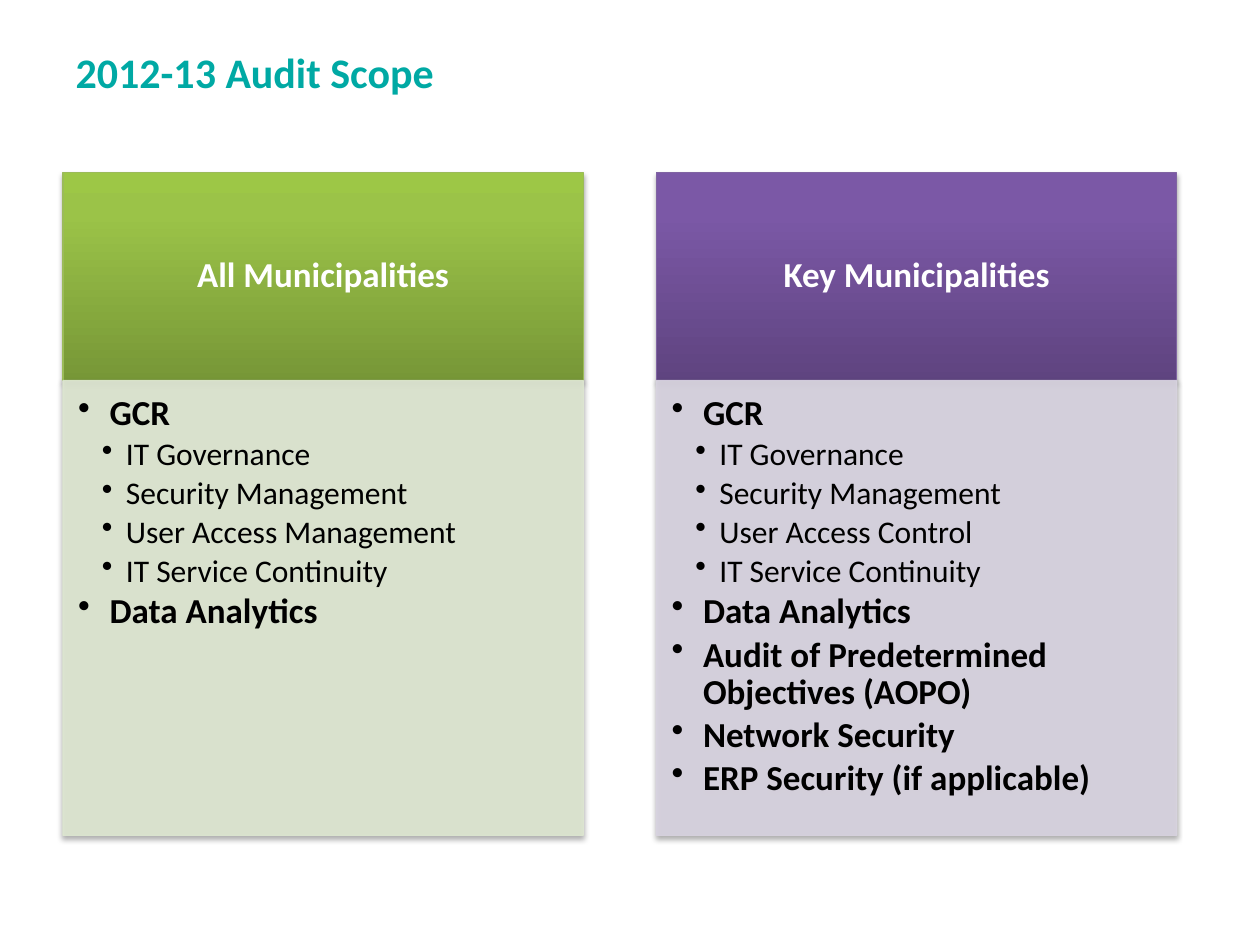
import pptx
import pptx.util
import pptx.dml.color
import pptx.enum.shapes
import pptx.enum.text
import pptx.oxml.ns
import lxml.etree

Inches, Pt = pptx.util.Inches, pptx.util.Pt
RGBColor = pptx.dml.color.RGBColor
ALIGN, ANCHOR = pptx.enum.text.PP_ALIGN, pptx.enum.text.MSO_ANCHOR
qn = pptx.oxml.ns.qn

TEAL = RGBColor(0x00, 0xA9, 0xA4)
WHITE = RGBColor(0xFF, 0xFF, 0xFF)
BLACK = RGBColor(0x00, 0x00, 0x00)
GREEN_LINE = RGBColor(0x9B, 0xBB, 0x59)
GREEN_PALE = RGBColor(0xDE, 0xE7, 0xD1)
GREEN_STOPS = [(0, RGBColor(0x77, 0x97, 0x37)), (80, RGBColor(0x9B, 0xC3, 0x48)),
               (100, RGBColor(0x9D, 0xC7, 0x46))]
PURPLE_LINE = RGBColor(0x80, 0x64, 0xA2)
PURPLE_PALE = RGBColor(0xD8, 0xD3, 0xE0)
PURPLE_STOPS = [(0, RGBColor(0x5F, 0x44, 0x80)), (80, RGBColor(0x7B, 0x58, 0xA6)),
                (100, RGBColor(0x7C, 0x57, 0xA8))]

# Layout: two equal columns, each a header above a body
LEFT, TOP, PITCH, WIDTH = 0.5, 1.37, 4.71, 4.13
HEADER_HEIGHT, BODY_HEIGHT = 1.65, 3.61
# Per level: text size, bold, left margin, hanging indent
LEVELS = [(20, True, 0.25, 0.25), (18, False, 0.38, 0.19)]


def add_xml(parent, tag, **attributes):
    child = lxml.etree.SubElement(parent, qn(tag))
    for name, value in attributes.items():
        child.set(name, str(value))
    return child


def write(paragraph, text, size=20, bold=True, color=BLACK, font="Calibri",
          align=ALIGN.LEFT, line_spacing=None, after=0):
    paragraph.alignment = align
    paragraph.line_spacing = line_spacing
    paragraph.space_after = Pt(after)
    run = paragraph.add_run()
    run.text = text
    run.font.name, run.font.size, run.font.bold = font, Pt(size), bold
    run.font.color.rgb = color


class ScopeSlide:
    def __init__(self, presentation):
        self.slide = presentation.slides.add_slide(presentation.slide_layouts[5])

    def title(self, text):
        title = self.slide.shapes.title
        title.left, title.top = Inches(LEFT), Inches(0.3)
        title.width, title.height = Inches(8.83), Inches(0.53)
        title.text_frame.vertical_anchor = ANCHOR.MIDDLE
        write(title.text_frame.paragraphs[0], text, size=24, color=TEAL)

    def panel(self, left, top, height, line, insets, anchor):
        panel = self.slide.shapes.add_shape(
            pptx.enum.shapes.MSO_SHAPE.RECTANGLE,
            Inches(left), Inches(top), Inches(WIDTH), Inches(height))
        panel.line.color.rgb, panel.line.width = line, Pt(0.75)
        # Soft shadow straight below
        panel.shadow.inherit = False
        effects = panel._element.spPr.find(qn("a:effectLst"))
        shadow = add_xml(effects, "a:outerShdw", blurRad=Pt(3.1), dist=Pt(1.8),
                         dir=90 * 60000, rotWithShape=0)
        add_xml(add_xml(shadow, "a:srgbClr", val=BLACK), "a:alpha", val=35000)
        frame = panel.text_frame
        frame.word_wrap, frame.vertical_anchor = True, anchor
        (frame.margin_left, frame.margin_top,
         frame.margin_right, frame.margin_bottom) = map(Inches, insets)
        return panel

    def header(self, left, text, stops, line):
        header = self.panel(left, TOP, HEADER_HEIGHT, line,
                            (0.16, 0.09, 0.16, 0.09), ANCHOR.MIDDLE)
        header.fill.gradient()
        gradient = header._element.spPr.find(qn("a:gradFill"))
        stop_list = gradient.find(qn("a:gsLst"))
        for old in list(stop_list):
            stop_list.remove(old)
        for position, color in stops:
            stop = add_xml(stop_list, "a:gs", pos=position * 1000)
            add_xml(stop, "a:srgbClr", val=color)
        gradient.find(qn("a:lin")).set("ang", str(270 * 60000))
        write(header.text_frame.paragraphs[0], text, color=WHITE,
              align=ALIGN.CENTER, line_spacing=0.9, after=7)

    def body(self, left, items, color):
        body = self.panel(left, TOP + HEADER_HEIGHT, BODY_HEIGHT, color,
                          (0.12, 0.12, 0.16, 0.17), ANCHOR.TOP)
        body.fill.solid()
        body.fill.fore_color.rgb = color
        # Fill and outline are both 90 % opaque
        for paint in body._element.spPr.iter(qn("a:solidFill")):
            add_xml(paint[0], "a:alpha", val=90000)
        frame = body.text_frame
        for index, (level, text) in enumerate(items):
            paragraph = frame.add_paragraph() if index else frame.paragraphs[0]
            self.bullet(paragraph, level, text)

    def bullet(self, paragraph, level, text):
        size, bold, margin, hanging = LEVELS[level]
        paragraph.level = level + 1
        properties = paragraph._p.get_or_add_pPr()
        properties.set("marL", str(Inches(margin)))
        properties.set("indent", str(-Inches(hanging)))
        add_xml(properties, "a:buChar", char="•")
        write(paragraph, text, size=size, bold=bold, line_spacing=0.9,
              after=0.15 * size)


def scope_items(access, *extras):
    details = ["IT Governance", "Security Management", access,
               "IT Service Continuity"]
    return ([(0, "GCR")] + [(1, detail) for detail in details]
            + [(0, extra) for extra in ("Data Analytics",) + extras])


def main():
    presentation = pptx.Presentation()
    presentation.slide_width, presentation.slide_height = Inches(10), Inches(7.5)
    scope = ScopeSlide(presentation)
    scope.title("2012-13 Audit Scope")

    # Municipality columns
    columns = [
        ("All Municipalities", GREEN_STOPS, GREEN_LINE, GREEN_PALE,
         scope_items("User Access Management")),
        ("Key Municipalities", PURPLE_STOPS, PURPLE_LINE, PURPLE_PALE,
         scope_items("User Access Control",
                     "Audit of Predetermined Objectives (AOPO)",
                     "Network Security", "ERP Security (if applicable)")),
    ]
    for index, (heading, stops, line, pale, items) in enumerate(columns):
        left = LEFT + index * PITCH
        scope.header(left, heading, stops, line)
        scope.body(left, items, pale)

    presentation.save("out.pptx")


if __name__ == "__main__":
    main()
